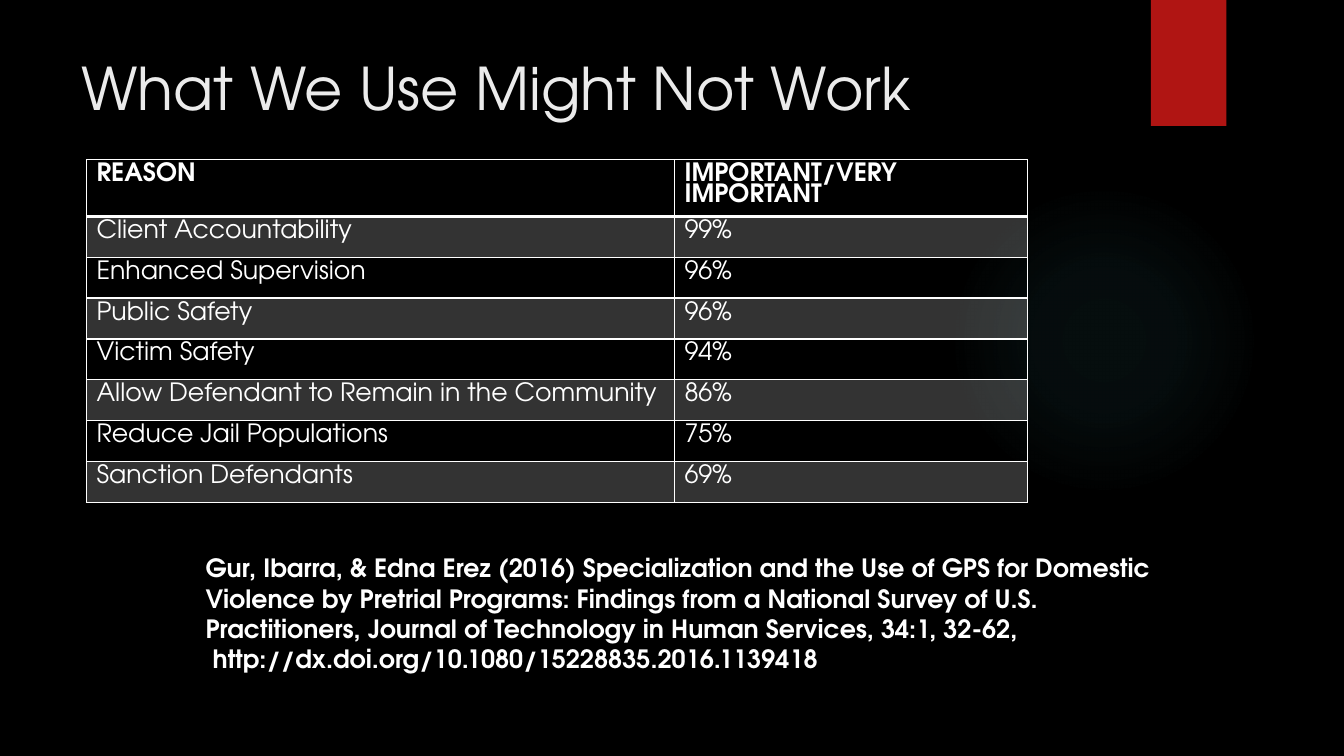
from lxml.etree import SubElement
from pptx import Presentation
from pptx.dml.color import RGBColor
from pptx.enum.shapes import MSO_SHAPE
from pptx.enum.text import MSO_ANCHOR, MSO_AUTO_SIZE, PP_ALIGN
from pptx.oxml import parse_xml
from pptx.oxml.ns import nsdecls, qn
from pptx.util import Pt

COLORS = {
    "background": "000000",
    "text": "FFFFFF",
    "title": "EBEBEB",
    "ribbon": "B01513",
    "glow": "50B9C1",
}
FONT = "TeX Gyre Adventor"
COLUMNS, ROWS = 160, 90
CELL = Pt(6)

REASONS = [
    ("REASON", "IMPORTANT/VERY IMPORTANT"),
    ("Client Accountability", "99%"),
    ("Enhanced Supervision", "96%"),
    ("Public Safety", "96%"),
    ("Victim Safety", "94%"),
    ("Allow Defendant to Remain in the Community", "86%"),
    ("Reduce Jail Populations", "75%"),
    ("Sanction Defendants", "69%"),
]
CITATION = [
    "Gur, Ibarra, & Edna Erez (2016) Specialization and the Use of GPS for Domestic "
    "Violence by Pretrial Programs: Findings from a National Survey of U.S. "
    "Practitioners, Journal of Technology in Human Services, 34:1, 32-62,",
    " http://dx.doi.org/10.1080/15228835.2016.1139418",
]


def grid(*cells):
    """Turn grid counts into slide lengths."""
    return [round(count * CELL) for count in cells]


def color(name):
    """Look up a named colour."""
    return RGBColor.from_string(COLORS[name])


def write(frame, *lines, size=18, ink="text", bold=False, spacing=1.0):
    """Write one paragraph per line in a text frame."""
    frame.word_wrap = True
    for index, line in enumerate(lines):
        paragraph = frame.add_paragraph() if index else frame.paragraphs[0]
        paragraph.alignment = PP_ALIGN.LEFT
        paragraph.line_spacing = spacing
        run = paragraph.add_run()
        run.text = line
        run.font.name = FONT
        run.font.size = Pt(size)
        run.font.bold = bold
        run.font.color.rgb = color(ink)


class Deck:
    """Holds the presentation style and the current slide."""

    def __init__(self):
        """Open a black title-only slide."""
        self.presentation = Presentation()
        self.presentation.slide_width, self.presentation.slide_height = grid(COLUMNS, ROWS)
        self.slide = self.presentation.slides.add_slide(self.presentation.slide_layouts[5])
        self.slide.background.fill.solid()
        self.slide.background.fill.fore_color.rgb = color("background")

    def block(self, preset, place, paint):
        """Add a plain shape without outline or shadow."""
        block = self.slide.shapes.add_shape(preset, *grid(*place))
        block.shadow.inherit = False
        block.line.fill.background()
        block.fill.solid()
        block.fill.fore_color.rgb = color(paint)
        return block

    def glow(self, place, stops):
        """Add a circle that fades out from its centre."""
        circle = self.block(MSO_SHAPE.OVAL, place, "glow")
        fades = "".join(
            f'<a:gs pos="{position * 1000}"><a:srgbClr val="{COLORS["glow"]}">'
            f'<a:alpha val="{opacity * 1000}"/></a:srgbClr></a:gs>'
            for position, opacity in stops
        )
        gradient = parse_xml(
            f'<a:gradFill {nsdecls("a")}><a:gsLst>{fades}</a:gsLst><a:path path="circle">'
            '<a:fillToRect l="50000" t="50000" r="50000" b="50000"/></a:path></a:gradFill>'
        )
        properties = circle.element.spPr
        properties.replace(properties.find(qn("a:solidFill")), gradient)

    def title(self, text, place):
        """Place and format the title."""
        heading = self.slide.shapes.title
        heading.left, heading.top, heading.width, heading.height = grid(*place)
        heading.text_frame.vertical_anchor = MSO_ANCHOR.TOP
        heading.text_frame.auto_size = MSO_AUTO_SIZE.NONE
        write(heading.text_frame, text, size=42, ink="title")

    def textbox(self, lines, place, **style):
        """Add a wrapped text box."""
        write(self.slide.shapes.add_textbox(*grid(*place)).text_frame, *lines, **style)

    def border(self, cell, **widths):
        """Draw cell borders, given in points by side."""
        properties = cell._tc.get_or_add_tcPr()
        for side, width in widths.items():
            line = SubElement(properties, qn(f"a:ln{side}"), w=str(Pt(width)))
            SubElement(SubElement(line, qn("a:solidFill")), qn("a:srgbClr"), val=COLORS["text"])

    def table(self, rows, corner, widths, header_height, row_height):
        """Add a ruled table with translucent bands."""
        heights = [header_height] + [row_height] * (len(rows) - 1)
        place = grid(*corner, sum(widths), sum(heights))
        table = self.slide.shapes.add_table(len(rows), len(widths), *place).table
        for column, width in zip(table.columns, grid(*widths)):
            column.width = width
        for index, (row, height, texts) in enumerate(zip(table.rows, grid(*heights), rows)):
            row.height = height
            for cell, text in zip(row.cells, texts):
                write(cell.text_frame, text, bold=index == 0, spacing=0.9)
                cell.margin_bottom = Pt(1)
                self.border(cell, L=1, R=1, T=2 if index == 1 else 1, B=2 if index == 0 else 1)
                if index % 2:
                    cell.fill.solid()
                    cell.fill.fore_color.rgb = color("text")
                    fill = cell._tc.tcPr.find(qn("a:solidFill"))
                    SubElement(fill[0], qn("a:alpha"), val="20000")
                else:
                    cell.fill.background()

    def save(self):
        """Save the presentation."""
        self.presentation.save("out.pptx")


def main():
    """Build the slide."""
    deck = Deck()
    deck.glow((112.9, 22, 37, 37), [(0, 7), (36, 6), (69, 0)])
    deck.block(MSO_SHAPE.RECTANGLE, (137, 0, 9, 15), "ribbon")
    deck.title("What We Use Might Not Work", (8.5, 5.6, 123.5, 18.4))
    deck.table(REASONS, (10.3, 19), (70, 42), header_height=6.75, row_height=4.87)
    deck.textbox(CITATION, (23.3, 65.2, 115.7, 15.7), bold=True)
    deck.save()


if __name__ == "__main__":
    main()
